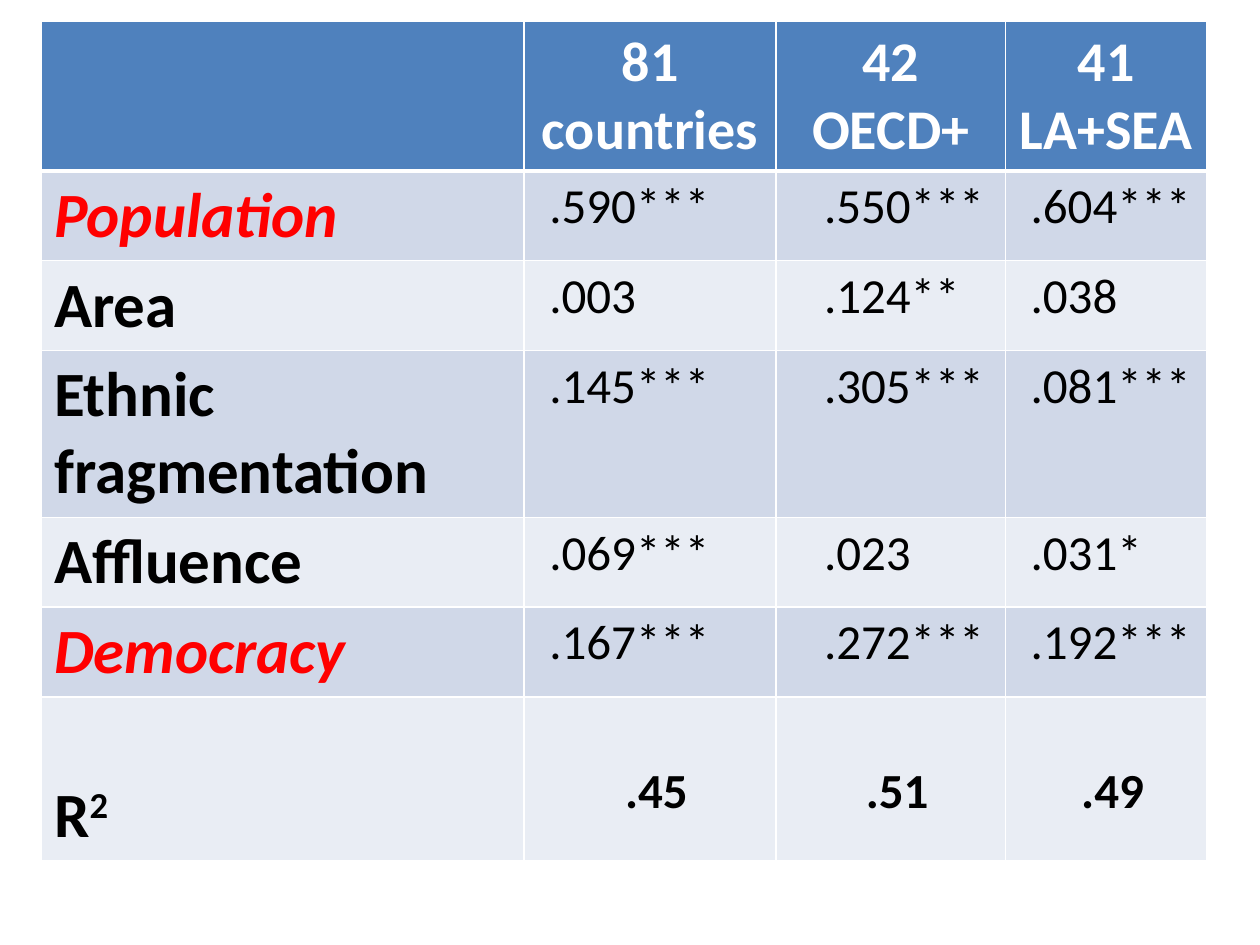
from lxml.etree import SubElement
from pptx import Presentation
from pptx.dml.color import RGBColor as Rgb
from pptx.enum.text import MSO_ANCHOR as Anchor, PP_ALIGN as Align
from pptx.oxml.ns import qn
from pptx.util import Inches, Pt

COLORS = {"header": "4F81BD", "odd": "D0D8E8", "even": "E9EDF4",
          "white": "FFFFFF", "black": "000000", "red": "FF0000"}
HEADERS = ["", "81 countries", "42 OECD+", "41 LA+SEA"]
EFFECTS = [
    ("Population", ".590***", ".550***", ".604***"),
    ("Area", ".003", ".124**", ".038"),
    ("Ethnic fragmentation", ".145***", ".305***", ".081***"),
    ("Affluence", ".069***", ".023", ".031*"),
    ("Democracy", ".167***", ".272***", ".192***"),
]
FIT = [".45", ".51", ".49"]
HIGHLIGHTED = {"Population", "Democracy"}
COLUMN_WIDTHS = [3.83, 2, 1.82, 1.6]
ROW_HEIGHTS = [1.15, 0.7, 0.7, 1.3, 0.7, 0.7, 1.3]
INDENTS = [0, 0.1, 0.28, 0.1]
FIT_INDENT = 0.1
FIT_TOP = 0.52


def write(cell, text, size=28, color="black", bold=False, italic=False,
          align=Align.LEFT, indent=0, raised=False):
    para = cell.text_frame.paragraphs[0]
    para.alignment = align
    if indent:
        para._p.get_or_add_pPr().set("marL", str(Inches(indent)))
    span = para.add_run()
    span.text = text
    font = span.font
    font.name, font.size, font.bold, font.italic = "Calibri", Pt(size), bold, italic
    font.color.rgb = Rgb.from_string(COLORS[color])
    if raised:
        span._r.get_or_add_rPr().set("baseline", "30000")


def style_cell(cell, fill, top=1, bottom=1):
    properties = cell._tc.get_or_add_tcPr()
    for side, width in (("L", 1), ("R", 1), ("T", top), ("B", bottom)):
        line = SubElement(properties, qn(f"a:ln{side}"), w=str(Pt(width)))
        solid = SubElement(line, qn("a:solidFill"))
        SubElement(solid, qn("a:srgbClr"), val=COLORS["white"])
    cell.fill.solid()
    cell.fill.fore_color.rgb = Rgb.from_string(COLORS[fill])


deck = Presentation()
deck.slide_width, deck.slide_height = Inches(10), Inches(7.5)
page = deck.slides.add_slide(deck.slide_layouts[6])
table = page.shapes.add_table(
    len(ROW_HEIGHTS), len(COLUMN_WIDTHS), Inches(0.33), Inches(0.17),
    Inches(sum(COLUMN_WIDTHS)), Inches(sum(ROW_HEIGHTS))).table
for column, width in zip(table.columns, COLUMN_WIDTHS):
    column.width = Inches(width)

for index, (row, height) in enumerate(zip(table.rows, ROW_HEIGHTS)):
    row.height = Inches(height)
    fill = "header" if index == 0 else "odd" if index % 2 else "even"
    for cell in row.cells:
        style_cell(cell, fill, top=3 if index == 1 else 1,
                   bottom=3 if index == 0 else 1)

for column, text in enumerate(HEADERS):
    if text:
        write(table.cell(0, column), text, size=32, color="white", bold=True,
              align=Align.CENTER)

for row, (label, *values) in enumerate(EFFECTS, 1):
    marked = label in HIGHLIGHTED
    write(table.cell(row, 0), label, size=36, bold=True, italic=marked,
          color="red" if marked else "black")
    for column, value in enumerate(values, 1):
        write(table.cell(row, column), value, indent=INDENTS[column])

last = len(ROW_HEIGHTS) - 1
fit_label = table.cell(last, 0)
fit_label.vertical_anchor = Anchor.BOTTOM
write(fit_label, "R", size=36, bold=True)
write(fit_label, "2", size=36, bold=True, raised=True)
for column, value in enumerate(FIT, 1):
    cell = table.cell(last, column)
    cell.margin_top = Inches(FIT_TOP)
    write(cell, value, bold=True, align=Align.CENTER, indent=FIT_INDENT)

deck.save("out.pptx")
